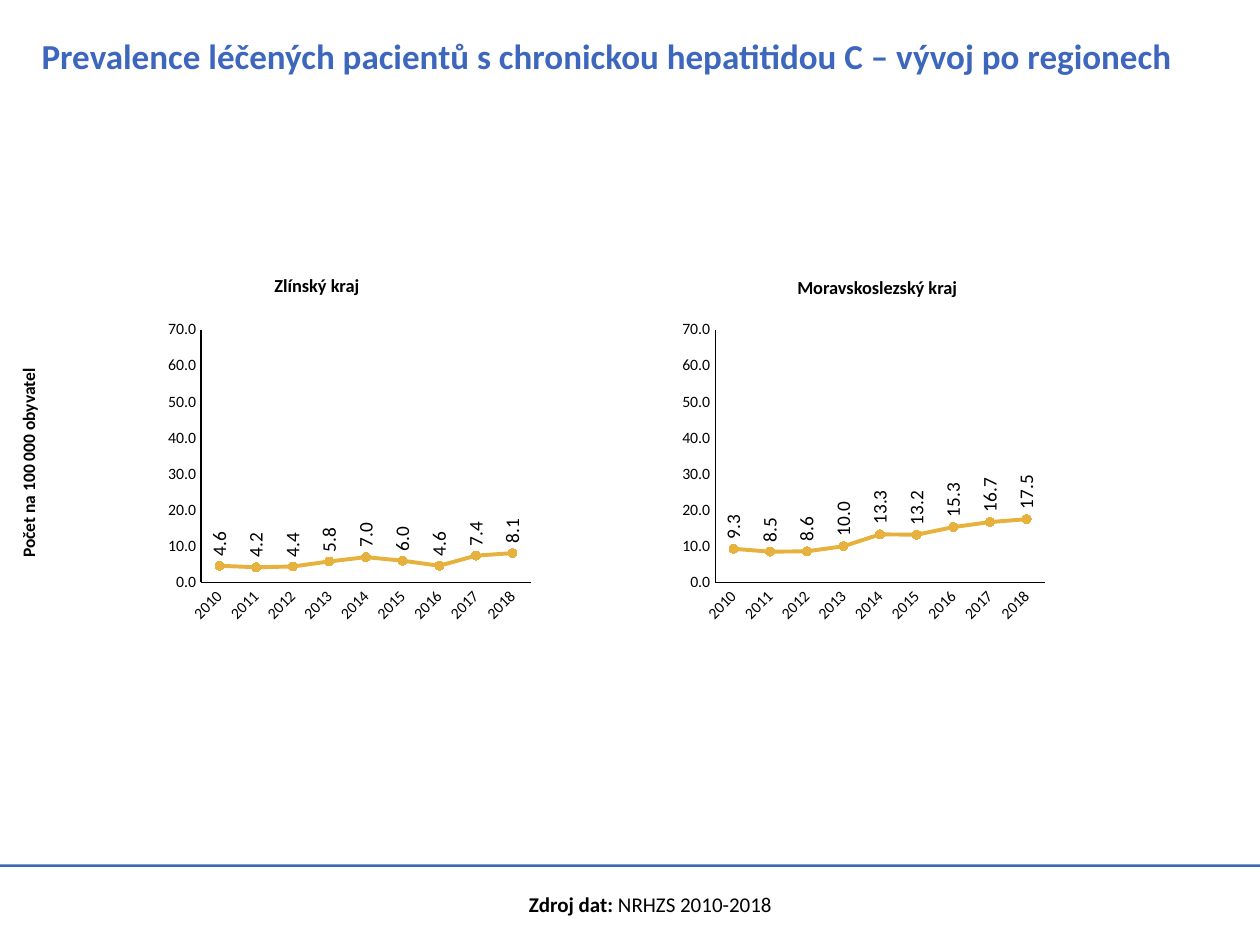
from dataclasses import dataclass

from lxml import etree
from pptx import Presentation
from pptx.chart.data import CategoryChartData
from pptx.dml.color import RGBColor
from pptx.enum.chart import XL_CHART_TYPE, XL_LABEL_POSITION, XL_MARKER_STYLE, XL_TICK_MARK
from pptx.enum.shapes import MSO_SHAPE
from pptx.enum.text import MSO_ANCHOR, PP_ALIGN
from pptx.oxml import parse_xml
from pptx.oxml.ns import nsdecls, qn
from pptx.util import Inches, Pt

LINE_MARKERS = XL_CHART_TYPE.LINE_MARKERS
ABOVE = XL_LABEL_POSITION.ABOVE
CIRCLE = XL_MARKER_STYLE.CIRCLE
NO_TICK = XL_TICK_MARK.NONE
CENTER = PP_ALIGN.CENTER
LEFT = PP_ALIGN.LEFT

FONT = "Calibri"
COLORS = {"blue": "3D67BC", "gold": "E7B13D", "black": "000000"}
YEARS = [str(year) for year in range(2010, 2019)]
NUMBER_FORMAT = "#,##0.0"
PLOT_LAYOUT = {"x": 0.105, "y": 0.05, "w": 0.87, "h": 0.8}


@dataclass
class Region:
    name: str
    chart_left: float
    label_box: tuple[float, float, float, float]
    values: list[float]


REGIONS = [
    Region("Zlínský kraj", 1.28, (2.08, 2.13, 0.89, 0.28),
           [4.6, 4.2, 4.4, 5.8, 7.0, 6.0, 4.6, 7.4, 8.1]),
    Region("Moravskoslezský kraj", 5.36, (6.23, 2.14, 1.5, 0.28),
           [9.3, 8.5, 8.6, 10.0, 13.3, 13.2, 15.3, 16.7, 17.5]),
]


def rgb(name: str) -> RGBColor:
    return RGBColor.from_string(COLORS[name])


def set_font(font, size: float, bold: bool | None = None, color: str = "black") -> None:
    font.name = FONT
    font.size = Pt(size)
    font.bold = bold
    font.color.rgb = rgb(color)


def add_text(slide, box, runs, size: float, wrap=False, align=LEFT, rotation=0) -> None:
    """Add one paragraph made of (text, bold) runs."""
    sp = slide.shapes.add_textbox(*map(Inches, box))
    sp.rotation = rotation
    tf = sp.text_frame
    tf.word_wrap = wrap
    p = tf.paragraphs[0]
    p.alignment = align
    for text, bold in runs:
        r = p.add_run()
        r.text = text
        set_font(r.font, size, bold)


def rotate_text(parent, degrees: int) -> None:
    body = parent.find(qn("c:txPr")).find(qn("a:bodyPr"))
    body.set("rot", str(degrees * 60000))
    body.set("vert", "horz")


def set_plot_layout(chart) -> None:
    """Fix the inner plot area so both charts share one scale."""
    area = chart.plots[0]._element.getparent()
    for old in area.findall(qn("c:layout")):
        area.remove(old)
    layout = parse_xml(f"<c:layout {nsdecls('c')}><c:manualLayout/></c:layout>")
    settings = {"layoutTarget": "inner", "xMode": "edge", "yMode": "edge", **PLOT_LAYOUT}
    for tag, value in settings.items():
        etree.SubElement(layout[0], qn(f"c:{tag}")).set("val", str(value))
    area.insert(0, layout)


def format_axis(axis) -> None:
    axis.has_major_gridlines = False
    axis.major_tick_mark = axis.minor_tick_mark = NO_TICK
    axis.format.line.color.rgb = rgb("black")
    axis.format.line.width = Pt(0.75)
    set_font(axis.tick_labels.font, 9)


def add_line_chart(slide, region: Region) -> None:
    data = CategoryChartData(number_format=NUMBER_FORMAT)
    data.categories = YEARS
    data.add_series("Series 1", region.values)
    box = map(Inches, (region.chart_left, 2.49, 3.01, 2.51))
    chart = slide.shapes.add_chart(LINE_MARKERS, *box, data).chart
    chart.has_title = chart.has_legend = False
    set_font(chart.font, 10)
    set_plot_layout(chart)

    for axis in (chart.category_axis, chart.value_axis):
        format_axis(axis)
    rotate_text(chart.category_axis._element, -45)
    value_axis = chart.value_axis
    value_axis.minimum_scale, value_axis.maximum_scale = 0, 70
    value_axis.major_unit = 10
    value_axis.tick_labels.number_format = NUMBER_FORMAT
    value_axis.tick_labels.number_format_is_linked = False

    plot = chart.plots[0]
    plot.vary_by_categories = False
    series = plot.series[0]
    series.smooth = False
    series.format.line.color.rgb = rgb("gold")
    series.format.line.width = Pt(2.25)
    marker = series.marker
    marker.style, marker.size = CIRCLE, 5
    marker.format.fill.solid()
    marker.format.fill.fore_color.rgb = rgb("gold")
    marker.format.line.color.rgb = rgb("gold")

    labels = series.data_labels
    labels.show_value = True
    labels.position = ABOVE
    labels.number_format = NUMBER_FORMAT
    labels.number_format_is_linked = False
    set_font(labels.font, 11)
    rotate_text(labels._element, -90)


def add_title(slide, text: str) -> None:
    title = slide.shapes.title
    title.left, title.top, title.width, title.height = map(Inches, (0.23, 0.19, 9.69, 0.5))
    tf = title.text_frame
    tf.text = text
    tf.word_wrap = True
    tf.vertical_anchor = MSO_ANCHOR.MIDDLE
    p = tf.paragraphs[0]
    p.alignment = LEFT
    set_font(p.font, 20, True, "blue")


def add_footer_rule(slide) -> None:
    rule = slide.shapes.add_shape(MSO_SHAPE.RECTANGLE, *map(Inches, (0, 6.86, 10, 0.02)))
    rule.shadow.inherit = False
    rule.fill.solid()
    rule.fill.fore_color.rgb = rgb("blue")
    rule.line.fill.background()


def main() -> None:
    prs = Presentation()
    prs.slide_width, prs.slide_height = Inches(10), Inches(7.5)
    slide = prs.slides.add_slide(prs.slide_layouts[5])
    add_footer_rule(slide)
    add_title(slide, "Prevalence léčených pacientů s chronickou hepatitidou C – vývoj po regionech")
    for region in REGIONS:
        add_line_chart(slide, region)
        add_text(slide, region.label_box, [(region.name, True)], 10.5)
    add_text(slide, (-1.25, 3.54, 2.95, 0.27), [("Počet na 100 000 obyvatel", True)], 10,
             wrap=True, align=CENTER, rotation=270)
    add_text(slide, (4.1, 7.03, 2.16, 0.3),
             [("Zdroj dat: ", True), ("NRHZS 2010-2018", False)], 12)
    prs.save("out.pptx")


if __name__ == "__main__":
    main()
